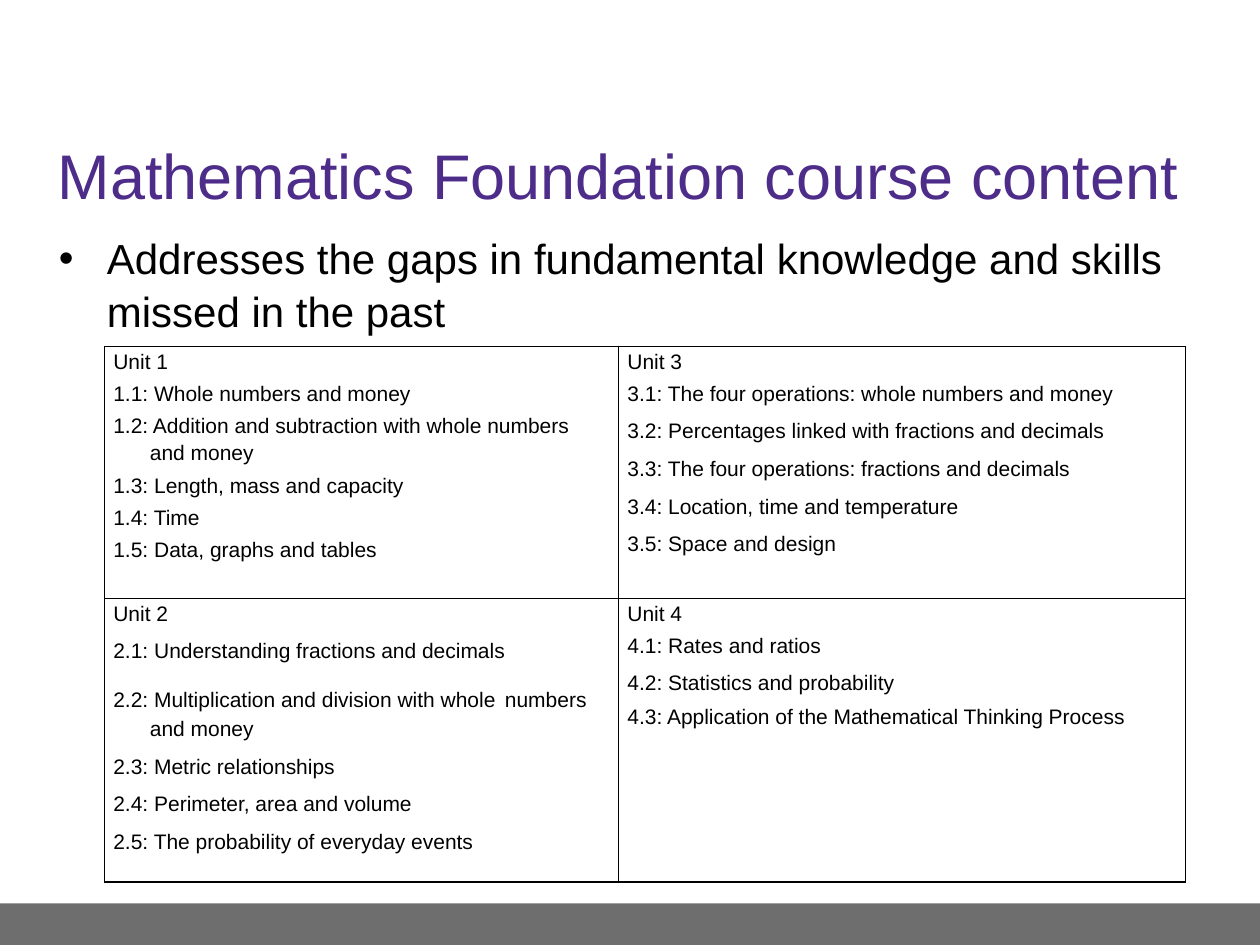
from lxml import etree
from pptx import Presentation
from pptx.dml.color import RGBColor
from pptx.enum.shapes import MSO_SHAPE
from pptx.enum.text import MSO_ANCHOR
from pptx.oxml.ns import qn
from pptx.util import Inches, Pt

COLORS = {"title": "4D2C8A", "text": "000000", "border": "000000", "footer": "6E6E6E"}
FONT = "Arial"

# Each topic: text runs as (text, size), and space before in points
UNITS = [
    [
        [
            ("Unit 1", 0),
            ("1.1: Whole numbers and money", 0),
            ("1.2: Addition and subtraction with whole numbers and money", 0),
            ("1.3: Length, mass and capacity", 0),
            ("1.4: Time", 0),
            ("1.5: Data, graphs and tables", 0),
        ],
        [
            ("Unit 3", 0),
            ("3.1: The four operations: whole numbers and money", 0),
            ("3.2: Percentages linked with fractions and decimals", 3),
            ("3.3: The four operations: fractions and decimals", 3),
            ("3.4: Location, time and temperature", 3),
            ("3.5: Space and design", 3),
        ],
    ],
    [
        [
            ("Unit 2", 0),
            ("2.1: Understanding fractions and decimals", 3),
            ("2.2: Multiplication and division with whole| |numbers and money", 3),
            ("2.3: Metric relationships", 3),
            ("2.4: Perimeter, area and volume", 3),
            ("2.5: The probability of everyday events", 3),
        ],
        [
            ("Unit 4", 0),
            ("4.1: Rates and ratios", 0),
            ("4.2: Statistics and probability", 3),
            ("4.3: Application of the Mathematical Thinking Process", 3),
        ],
    ],
]
HANGING = ("1.2", "2.2")
SINGLE_SPACED = ("4.3",)


def add_run(p, text, size, color):
    r = p.add_run()
    r.text = text
    r.font.name = FONT
    r.font.size = Pt(size)
    r.font.color.rgb = RGBColor.from_string(COLORS[color])


def set_hanging(p, indent):
    pPr = p._p.get_or_add_pPr()
    pPr.set("marL", str(Inches(indent)))
    pPr.set("indent", str(-Inches(indent)))
    return pPr


def add_text_box(slide, x, y, w, h, anchor):
    box = slide.shapes.add_textbox(Inches(x), Inches(y), Inches(w), Inches(h))
    tf = box.text_frame
    tf.word_wrap = True
    tf.vertical_anchor = anchor
    return tf.paragraphs[0]


def add_footer(slide, x, y, w, h):
    sp = slide.shapes.add_shape(
        MSO_SHAPE.RECTANGLE, Inches(x), Inches(y), Inches(w), Inches(h))
    sp.shadow.inherit = False
    sp.fill.solid()
    sp.fill.fore_color.rgb = RGBColor.from_string(COLORS["footer"])
    sp.line.fill.background()


def add_title(slide, x, y, w, h):
    p = add_text_box(slide, x, y, w, h, MSO_ANCHOR.MIDDLE)
    add_run(p, "Mathematics Foundation course content", 36, "title")


def add_body(slide, x, y, w, h):
    p = add_text_box(slide, x, y, w, h, MSO_ANCHOR.TOP)
    pPr = set_hanging(p, 0.38)
    etree.SubElement(pPr, qn("a:buFont")).set("typeface", FONT)
    etree.SubElement(pPr, qn("a:buChar")).set("char", "•")
    p.line_spacing = 1.05
    add_run(p, "Addresses the gaps in fundamental knowledge and skills missed in the past",
            24, "text")


def set_borders(cell):
    tcPr = cell._tc.get_or_add_tcPr()
    for i, side in enumerate(("lnL", "lnR", "lnT", "lnB")):
        ln = etree.Element(qn(f"a:{side}"), w=str(Pt(1)))
        fill = etree.SubElement(ln, qn("a:solidFill"))
        etree.SubElement(fill, qn("a:srgbClr")).set("val", COLORS["border"])
        tcPr.insert(i, ln)


def fill_cell(cell, topics):
    cell.margin_left = cell.margin_right = Inches(0.07)
    cell.margin_top = cell.margin_bottom = 0
    cell.fill.background()
    set_borders(cell)
    tf = cell.text_frame
    for i, (topic, before) in enumerate(topics):
        p = tf.add_paragraph() if i else tf.paragraphs[0]
        if topic.startswith(HANGING):
            set_hanging(p, 0.29)
        p.line_spacing = 1.0 if topic.startswith(SINGLE_SPACED) else 1.15
        p.space_before = Pt(before)
        p.space_after = Pt(3)
        # A bar separates runs; a lone space is set larger
        for part in topic.split("|"):
            add_run(p, part, 18 if part == " " else 12, "text")


def add_units_table(slide, x, y, col_widths, row_heights):
    frame = slide.shapes.add_table(
        len(row_heights), len(col_widths), Inches(x), Inches(y),
        Inches(sum(col_widths)), Inches(sum(row_heights)))
    table = frame.table
    table.first_row = table.horz_banding = False
    for col, width in zip(table.columns, col_widths):
        col.width = Inches(width)
    for row, height, units in zip(table.rows, row_heights, UNITS):
        row.height = Inches(height)
        for cell, topics in zip(row.cells, units):
            fill_cell(cell, topics)


def main():
    prs = Presentation()
    prs.slide_width, prs.slide_height = Inches(10), Inches(7.5)
    slide = prs.slides.add_slide(prs.slide_layouts[6])
    add_footer(slide, 0, 7.17, 10, 0.33)
    add_title(slide, 0.36, 0.92, 9.35, 0.92)
    add_body(slide, 0.37, 1.78, 9.33, 5.04)
    add_units_table(slide, 0.83, 2.75, [4.08, 4.5], [2, 2.25])
    prs.save("out.pptx")


if __name__ == "__main__":
    main()
